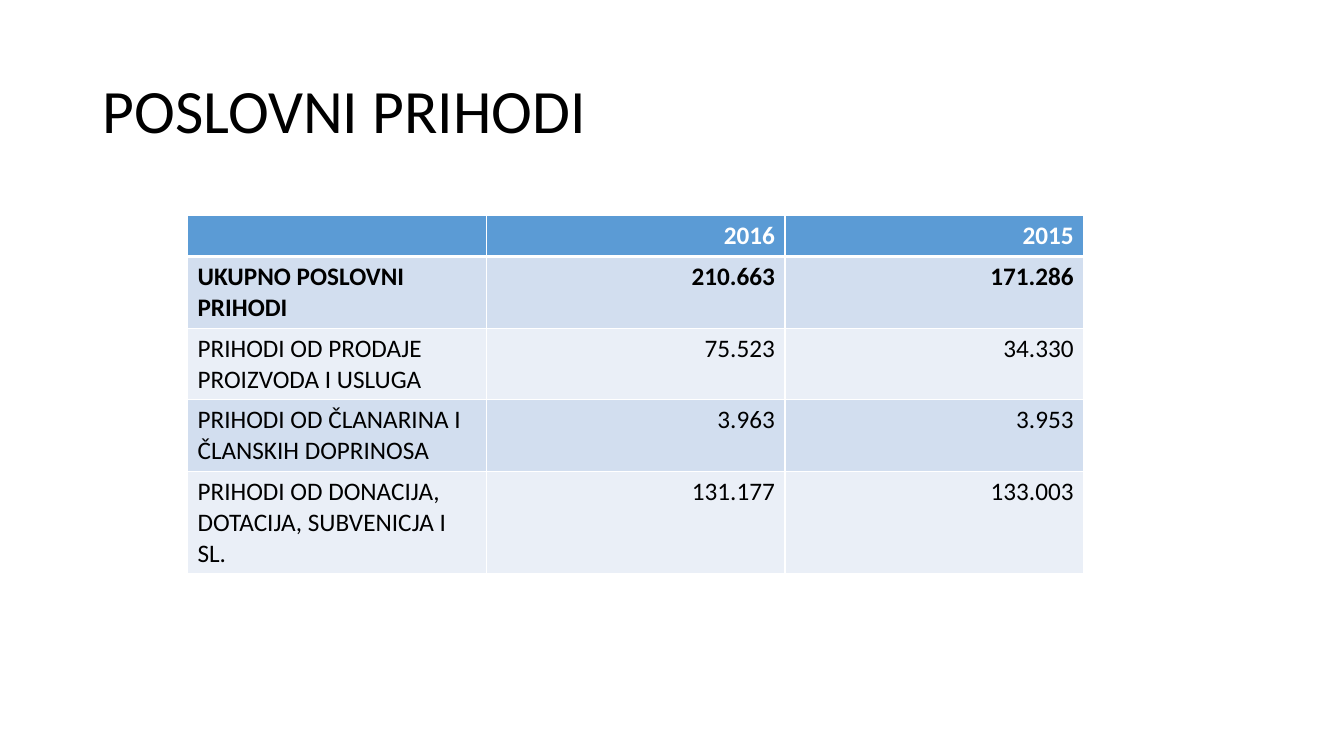
from lxml.etree import SubElement
from pptx import Presentation
from pptx.dml.color import RGBColor
from pptx.enum.text import MSO_ANCHOR, PP_ALIGN
from pptx.oxml.ns import qn
from pptx.util import Inches, Pt

TITLE_BOX = (0.92, 0.4, 11.5, 1.45)
TABLE_BOX = (1.86, 2.14, 8.89, 3.5)
HEADER_HEIGHT, BODY_HEIGHT = 0.23, 0.41
HEADER_FILL = "5B9BD5"
BAND_FILLS = ("EAEFF7", "D2DEEF")
INCOME_ROWS = [
    ("", "2016", "2015"),
    ("UKUPNO POSLOVNI PRIHODI", "210.663", "171.286"),
    ("PRIHODI OD PRODAJE PROIZVODA I USLUGA", "75.523", "34.330"),
    ("PRIHODI OD ČLANARINA I ČLANSKIH DOPRINOSA", "3.963", "3.953"),
    ("PRIHODI OD DONACIJA, DOTACIJA, SUBVENICJA I SL.", "131.177", "133.003"),
]


def color(value):
    return RGBColor.from_string(value)


def write(para, text, fill, **font_values):
    span = para.add_run()
    span.text = text
    for name, value in {"name": "Calibri", **font_values}.items():
        setattr(span.font, name, value)
    span.font.color.rgb = color(fill)


def add_borders(cell, widths):
    properties = cell._tc.get_or_add_tcPr()
    for index, (side, width) in enumerate(widths.items()):
        line = SubElement(properties, qn(f"a:ln{side}"), w=str(Pt(width)))
        fill = SubElement(line, qn("a:solidFill"))
        SubElement(fill, qn("a:srgbClr"), val="FFFFFF")
        properties.insert(index, line)


def place_title(page, box):
    title = page.shapes.title
    for name, value in zip(("left", "top", "width", "height"), box):
        setattr(title, name, Inches(value))
    frame = title.text_frame
    frame.word_wrap = True
    frame.vertical_anchor = MSO_ANCHOR.MIDDLE
    para = frame.paragraphs[0]
    para.alignment = PP_ALIGN.LEFT
    para.line_spacing = 0.9
    write(para, "POSLOVNI PRIHODI", "000000", size=Pt(44))


def place_income_table(page, box):
    left, top, width, height = map(Inches, box)
    holder = page.shapes.add_table(
        len(INCOME_ROWS), len(INCOME_ROWS[0]), left, top, width, height)
    table = holder.table
    for row_index, values in enumerate(INCOME_ROWS):
        is_header = row_index == 0
        table.rows[row_index].height = Inches(HEADER_HEIGHT if is_header else BODY_HEIGHT)
        widths = {"L": 1, "R": 1,
                  "T": 3 if row_index == 1 else 1,
                  "B": 3 if is_header else 1}
        for column_index, text in enumerate(values):
            cell = table.cell(row_index, column_index)
            cell.fill.solid()
            cell.fill.fore_color.rgb = color(
                HEADER_FILL if is_header else BAND_FILLS[row_index % 2])
            add_borders(cell, widths)
            para = cell.text_frame.paragraphs[0]
            para.alignment = PP_ALIGN.RIGHT if column_index else PP_ALIGN.LEFT
            if text:
                write(para, text, "FFFFFF" if is_header else "000000",
                      size=Pt(18), bold=row_index < 2)
    holder.height = height


def main():
    deck = Presentation()
    deck.slide_width, deck.slide_height = Inches(13.33), Inches(7.5)
    page = deck.slides.add_slide(deck.slide_layouts[5])
    place_title(page, TITLE_BOX)
    place_income_table(page, TABLE_BOX)
    deck.save("out.pptx")


if __name__ == "__main__":
    main()
